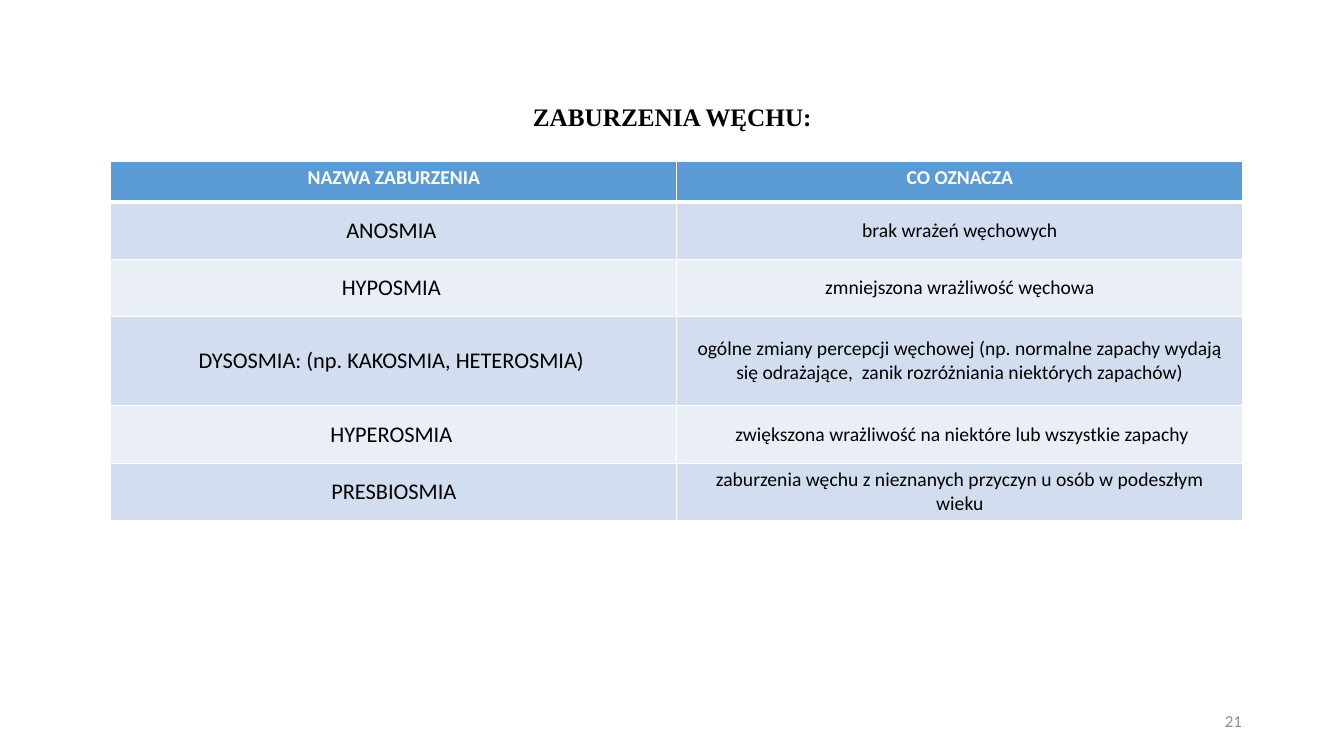
from dataclasses import dataclass

import lxml.etree
import pptx
import pptx.dml.color
import pptx.enum.text
import pptx.oxml.ns
import pptx.util

Pt = pptx.util.Pt
Align = pptx.enum.text.PP_ALIGN
Anchor = pptx.enum.text.MSO_ANCHOR


@dataclass(frozen=True)
class Theme:
    title_font: str = "Times New Roman"
    body_font: str = "Calibri"
    black: str = "000000"
    white: str = "FFFFFF"
    grey: str = "8C8C8C"
    header_fill: str = "5B9BD5"
    band_fills: tuple[str, str] = ("D2DEEF", "EAEFF7")
    title_size: float = 18
    name_size: float = 16
    text_size: float = 14
    number_size: float = 12
    thin_border: float = 1
    thick_border: float = 3


@dataclass(frozen=True)
class TextStyle:
    size: float
    color: str
    font: str
    bold: bool = False
    align: Align = Align.CENTER


@dataclass(frozen=True)
class Label:
    text: str
    left: float
    top: float
    width: float
    height: float
    style: TextStyle
    anchor: Anchor = Anchor.TOP
    line_spacing: float = 1.0


@dataclass(frozen=True)
class Disorder:
    name: str
    meaning: str
    height: float = 40.9


THEME = Theme()
HEADER_STYLE = TextStyle(THEME.text_size, THEME.white, THEME.body_font, bold=True)
NAME_STYLE = TextStyle(THEME.name_size, THEME.black, THEME.body_font)
MEANING_STYLE = TextStyle(THEME.text_size, THEME.black, THEME.body_font)

LABELS = (
    Label("ZABURZENIA WĘCHU:", 33.84, 71.28, 892.8, 416.16,
          TextStyle(THEME.title_size, THEME.black, THEME.title_font, bold=True),
          line_spacing=0.9),
    Label("21", 678.24, 500.4, 216, 28.8,
          TextStyle(THEME.number_size, THEME.grey, THEME.body_font, align=Align.RIGHT),
          anchor=Anchor.MIDDLE),
)

HEADINGS = ("NAZWA ZABURZENIA", "CO OZNACZA")
DISORDERS = (
    Disorder("ANOSMIA ", "brak wrażeń węchowych"),
    Disorder("HYPOSMIA ", "zmniejszona wrażliwość węchowa"),
    Disorder("DYSOSMIA: (np. KAKOSMIA, HETEROSMIA) ",
             "ogólne zmiany percepcji węchowej (np. normalne zapachy wydają się "
             "odrażające,  zanik rozróżniania niektórych zapachów)", 64),
    Disorder("HYPEROSMIA ", " zwiększona wrażliwość na niektóre lub wszystkie zapachy"),
    Disorder("PRESBIOSMIA", "zaburzenia węchu z nieznanych przyczyn u osób w podeszłym wieku"),
)
TABLE_LEFT, TABLE_TOP, COLUMN_WIDTH, HEADER_HEIGHT = 79.2, 115.2, 404.3, 29
CELL_INSET_X, CELL_INSET_Y = 9.36, 3.3


def rgb(color: str) -> pptx.dml.color.RGBColor:
    return pptx.dml.color.RGBColor.from_string(color)


def write_text(frame: pptx.text.text.TextFrame, text: str, style: TextStyle,
               line_spacing: float = 1.0) -> None:
    paragraph = frame.paragraphs[0]
    paragraph.alignment = style.align
    paragraph.line_spacing = line_spacing
    run = paragraph.add_run()
    run.text = text
    run.font.size = Pt(style.size)
    run.font.name = style.font
    run.font.bold = style.bold
    run.font.color.rgb = rgb(style.color)


def add_label(slide: pptx.slide.Slide, label: Label) -> None:
    box = slide.shapes.add_textbox(Pt(label.left), Pt(label.top),
                                   Pt(label.width), Pt(label.height))
    box.text_frame.word_wrap = True
    box.text_frame.vertical_anchor = label.anchor
    write_text(box.text_frame, label.text, label.style, label.line_spacing)


def add_borders(cell: pptx.table._Cell, top: float, bottom: float) -> None:
    """Draw white cell borders; call before the fill, which must follow them in the XML."""
    qn = pptx.oxml.ns.qn
    properties = cell._tc.get_or_add_tcPr()
    thin = THEME.thin_border
    for side, width in (("L", thin), ("R", thin), ("T", top), ("B", bottom)):
        line = lxml.etree.SubElement(properties, qn(f"a:ln{side}"), w=str(int(Pt(width))))
        fill = lxml.etree.SubElement(line, qn("a:solidFill"))
        lxml.etree.SubElement(fill, qn("a:srgbClr"), val=THEME.white)


def fill_cell(cell: pptx.table._Cell, text: str, style: TextStyle, color: str,
              anchor: Anchor, top: float, bottom: float) -> None:
    cell.margin_left = cell.margin_right = Pt(CELL_INSET_X)
    cell.margin_top = cell.margin_bottom = Pt(CELL_INSET_Y)
    cell.vertical_anchor = anchor
    add_borders(cell, top, bottom)
    cell.fill.solid()
    cell.fill.fore_color.rgb = rgb(color)
    write_text(cell.text_frame, text, style)


def add_disorder_table(slide: pptx.slide.Slide) -> None:
    heights = [HEADER_HEIGHT] + [disorder.height for disorder in DISORDERS]
    table = slide.shapes.add_table(
        len(heights), len(HEADINGS), Pt(TABLE_LEFT), Pt(TABLE_TOP),
        Pt(COLUMN_WIDTH * len(HEADINGS)), Pt(sum(heights))).table
    for column in table.columns:
        column.width = Pt(COLUMN_WIDTH)
    for row, height in zip(table.rows, heights):
        row.height = Pt(height)

    thin, thick = THEME.thin_border, THEME.thick_border
    for column_index, heading in enumerate(HEADINGS):
        fill_cell(table.cell(0, column_index), heading, HEADER_STYLE,
                  THEME.header_fill, Anchor.TOP, thin, thick)
    for index, disorder in enumerate(DISORDERS):
        band = THEME.band_fills[index % 2]
        top = thick if index == 0 else thin
        entries = ((disorder.name, NAME_STYLE), (disorder.meaning, MEANING_STYLE))
        for column_index, (text, style) in enumerate(entries):
            fill_cell(table.cell(index + 1, column_index), text, style,
                      band, Anchor.MIDDLE, top, thin)


def main() -> None:
    presentation = pptx.Presentation()
    presentation.slide_width, presentation.slide_height = Pt(960), Pt(540)
    slide = presentation.slides.add_slide(presentation.slide_layouts[6])
    title, page_number = LABELS
    add_label(slide, title)
    add_disorder_table(slide)
    add_label(slide, page_number)
    presentation.save("out.pptx")


if __name__ == "__main__":
    main()
